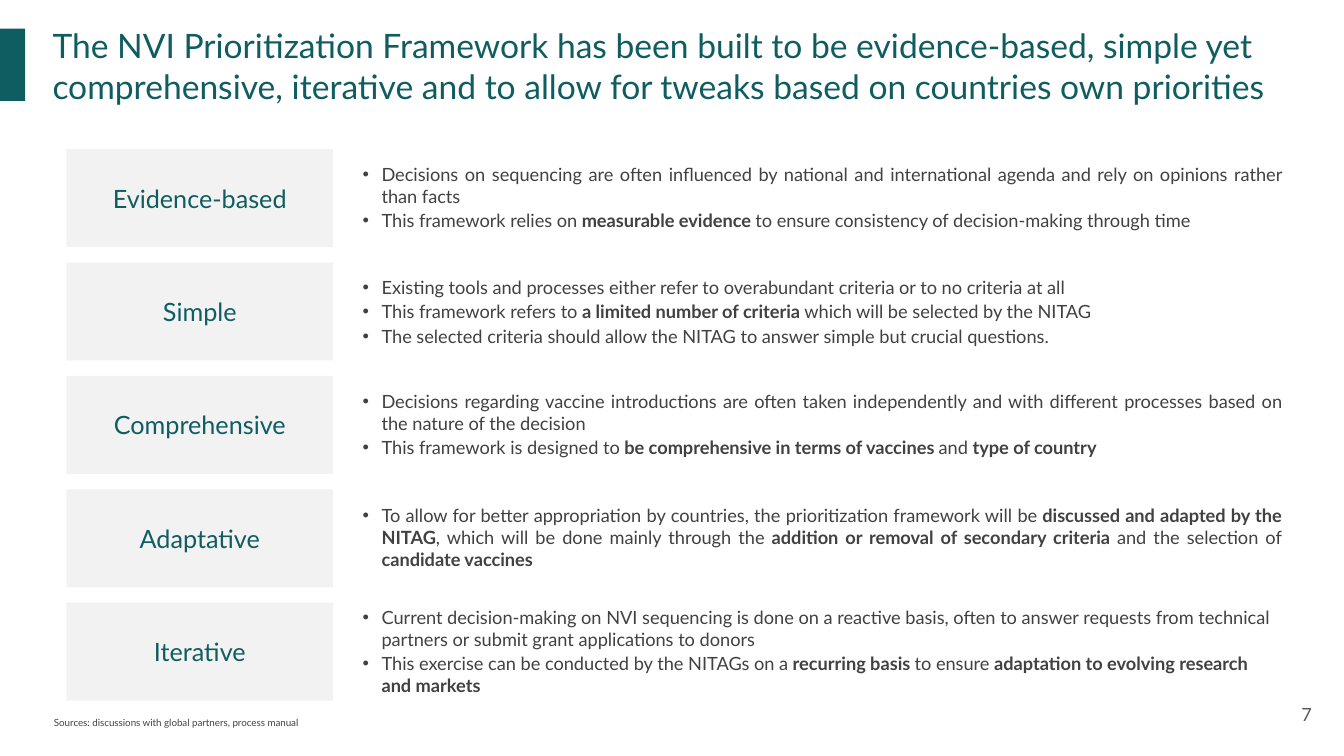
from pptx import Presentation
from pptx.dml.color import RGBColor
from pptx.enum.shapes import MSO_SHAPE as Shape
from pptx.enum.text import MSO_ANCHOR as Anchor, MSO_AUTO_SIZE as AutoSize, PP_ALIGN as Align
from pptx.oxml.ns import qn
from pptx.util import Pt
from lxml.etree import SubElement

TEAL, LIGHT_GREY, DARK_GREY, MID_GREY = "0F5D61", "F2F2F2", "414141", "595959"

# Principle, height of its explanation, alignment, bullets (** marks bold)
PRINCIPLES = [
    ("Evidence-based", 57, Align.JUSTIFY, [
        "Decisions on sequencing are often influenced by national and international agenda "
        "and rely on opinions rather than facts",
        "This framework relies on **measurable evidence **to ensure consistency of "
        "decision-making through time"]),
    ("Simple", 58, Align.JUSTIFY, [
        "Existing tools and processes either refer to overabundant criteria or to no criteria at all",
        "This framework refers to **a limited number of criteria **which will be selected by the NITAG",
        "The selected criteria should allow the NITAG to answer simple but crucial questions."]),
    ("Comprehensive", 57, Align.JUSTIFY, [
        "Decisions regarding vaccine introductions are often taken independently and with "
        "different processes based on the nature of the decision",
        "This framework is designed to **be comprehensive in terms of vaccines **and **type of country**"]),
    ("Adaptative", 55, Align.JUSTIFY, [
        "To allow for better appropriation by countries, the prioritization framework will be "
        "**discussed and adapted by the NITAG**, which will be done mainly through the "
        "**addition or removal of secondary criteria** and the selection of **candidate vaccines**"]),
    ("Iterative", 72, Align.LEFT, [
        "Current decision-making on NVI sequencing is done on a reactive basis, often to answer "
        "requests from technical partners or submit grant applications to donors",
        "This exercise can be conducted by the NITAGs on a **recurring basis **to ensure "
        "**adaptation to evolving research and markets**"]),
]


def rgb(hex_color):
    return RGBColor.from_string(hex_color)


class SlideBuilder:
    def __init__(self, slide, font="Lato"):
        self.slide = slide
        self.font = font

    def style(self, paragraph, size, color, align):
        paragraph.alignment = align
        for run in paragraph.runs:
            run.font.name = self.font
            run.font.size = Pt(size)
            run.font.color.rgb = rgb(color)

    def block(self, left, top, width, height, fill, label=""):
        block = self.slide.shapes.add_shape(
            Shape.RECTANGLE, Pt(left), Pt(top), Pt(width), Pt(height))
        block.shadow.inherit = False
        block.fill.solid()
        block.fill.fore_color.rgb = rgb(fill)
        block.line.fill.background()
        if label:
            block.text_frame.text = label
            block.text_frame.vertical_anchor = Anchor.MIDDLE
            self.style(block.text_frame.paragraphs[0], 18, TEAL, Align.CENTER)

    def frame(self, left, top, width, height):
        frame = self.slide.shapes.add_textbox(
            Pt(left), Pt(top), Pt(width), Pt(height)).text_frame
        frame.word_wrap = True
        return frame

    def text(self, left, top, width, height, content, size, color,
             align=Align.LEFT, anchor=Anchor.TOP, inset=None):
        frame = self.frame(left, top, width, height)
        frame.text = content
        frame.vertical_anchor = anchor
        if inset is not None:
            frame.margin_left = frame.margin_right = Pt(inset)
            frame.margin_top = frame.margin_bottom = Pt(inset)
        self.style(frame.paragraphs[0], size, color, align)

    def bullets(self, left, top, width, height, items, align):
        frame = self.frame(left, top, width, height)
        frame.auto_size = AutoSize.SHAPE_TO_FIT_TEXT
        for index, item in enumerate(items):
            paragraph = frame.add_paragraph() if index else frame.paragraphs[0]
            paragraph.space_before = Pt(2)
            # Every second piece between the marks is bold
            for order, piece in enumerate(item.split("**")):
                if piece:
                    run = paragraph.add_run()
                    run.text = piece
                    run.font.bold = order % 2 == 1
            self.style(paragraph, 13, DARK_GREY, align)
            properties = paragraph._p.get_or_add_pPr()
            properties.set("marL", str(Pt(13.5)))
            properties.set("indent", str(-Pt(13.5)))
            SubElement(properties, qn("a:buFont"), typeface="Arial")
            SubElement(properties, qn("a:buChar"), char="•")


def main():
    deck = Presentation()
    deck.slide_width, deck.slide_height = Pt(960), Pt(540)
    builder = SlideBuilder(deck.slides.add_slide(deck.slide_layouts[6]))

    # Title with accent bar
    builder.block(0, 20.5, 18, 51.5, TEAL)
    builder.text(37.5, 18, 904, 57.5,
                 "The NVI Prioritization Framework has been built to be evidence-based, simple yet "
                 "comprehensive, iterative and to allow for tweaks based on countries own priorities",
                 24, TEAL, inset=0)

    # One row per principle, explanation centred on its card
    first_top, row_pitch, card_height = 106.5, 81, 70
    for row, (principle, height, align, items) in enumerate(PRINCIPLES):
        top = first_top + row * row_pitch
        builder.block(47.5, top, 190.5, card_height, LIGHT_GREY, principle)
        builder.bullets(252, top + (card_height - height) / 2, 670.5, height, items, align)

    # Footer
    builder.text(31.5, 508.5, 872.5, 16,
                 "Sources: discussions with global partners, process manual", 7, DARK_GREY)
    builder.text(889, 489.5, 57.5, 41, "7", 13, MID_GREY, Align.RIGHT, Anchor.MIDDLE, 9.5)

    deck.save("out.pptx")


if __name__ == "__main__":
    main()
